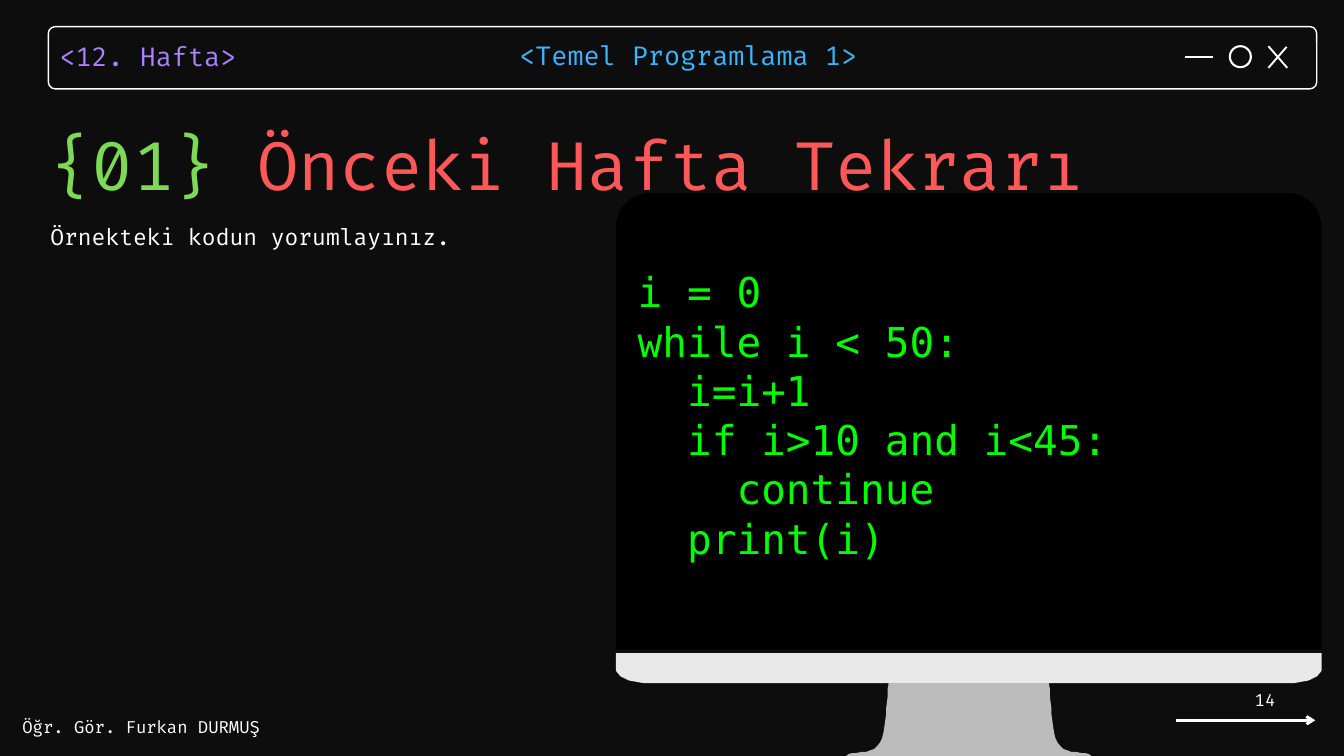
from pptx import Presentation
from pptx.dml.color import RGBColor
from pptx.enum import shapes, text
from pptx.oxml import parse_xml
from pptx.oxml.ns import nsdecls
from pptx.util import Pt

PX = 9525  # EMU per px, 96 px to the inch
COLORS = {
    "background": "0D0D0D", "white": "FFFFFF", "black": "000000",
    "purple": "AB81FF", "blue": "38B6FF", "green": "7ED957", "red": "FF5858",
    "code": "00FF00", "base": "E9E9E9", "stand": "BBBBBB",
}
RGB = {name: RGBColor.from_string(value) for name, value in COLORS.items()}


def write(box, paragraphs, size, font="Fira Code", spacing=None, inset=0,
          align=text.PP_ALIGN.LEFT, anchor=text.MSO_ANCHOR.TOP):
    """Fill a box with paragraphs, each a list of (words, colour) spans."""
    frame = box.text_frame
    frame.word_wrap = True
    frame.auto_size = text.MSO_AUTO_SIZE.NONE
    frame.vertical_anchor = anchor
    frame.margin_left = frame.margin_right = inset * PX
    frame.margin_top = frame.margin_bottom = inset * PX // 2
    for index, spans in enumerate(paragraphs):
        para = frame.add_paragraph() if index else frame.paragraphs[0]
        para.alignment = align
        if spacing:
            para.line_spacing = Pt(spacing)
        for words, color in spans:
            span = para.add_run()
            span.text = words
            span.font.size = Pt(size)
            span.font.name = font
            span.font.color.rgb = RGB[color]


def curve(start, first, second, end, steps=12):
    """Points along a cubic curve, without its start."""
    points = []
    for step in range(1, steps + 1):
        t = step / steps
        weights = ((1 - t) ** 3, 3 * t * (1 - t) ** 2, 3 * t * t * (1 - t), t ** 3)
        corners = (start, first, second, end)
        points.append(tuple(sum(w * c[axis] for w, c in zip(weights, corners))
                            for axis in (0, 1)))
    return points


deck = Presentation()
deck.slide_width, deck.slide_height = 1920 * PX, 1080 * PX
page = deck.slides.add_slide(deck.slide_layouts[5])
page.background.fill.solid()
page.background.fill.fore_color.rgb = RGB["background"]

# Title
title = page.shapes.title
title.left, title.top, title.width, title.height = (
    n * PX for n in (72, 155, 1848, 135))
write(title, [[("{01} ", "green"), ("Önceki Hafta Tekrarı", "red")]],
      size=72, spacing=102.6)

# Window bar and its round button
for kind, bounds, width in (
        (shapes.MSO_SHAPE.ROUNDED_RECTANGLE, (69, 38, 1812, 89), 1.5),
        (shapes.MSO_SHAPE.OVAL, (1757, 66, 30, 30), 2.25)):
    outline = page.shapes.add_shape(kind, *(n * PX for n in bounds))
    outline.shadow.inherit = False
    outline.fill.background()
    outline.line.color.rgb = RGB["white"]
    outline.line.width = Pt(width)
    if kind == shapes.MSO_SHAPE.ROUNDED_RECTANGLE:
        outline.adjustments[0] = 0.11

# Close cross, minimise dash, page arrow
for ends, width, arrow in (
        ((1812, 66, 1839, 97), 2, False),
        ((1838, 67, 1812, 97), 2, False),
        ((1693, 82, 1733, 82), 2, False),
        ((1680, 1029, 1879, 1029), 3, True)):
    line = page.shapes.add_connector(shapes.MSO_CONNECTOR.STRAIGHT,
                                     *(n * PX for n in ends))
    line.line.color.rgb = RGB["white"]
    line.line.width = Pt(width)
    if arrow:
        line.line._get_or_add_ln().append(
            parse_xml(f'<a:tailEnd {nsdecls("a")} type="arrow"/>'))
    line._element.spPr.append(parse_xml(f'<a:effectLst {nsdecls("a")}/>'))

# Labels
for bounds, words, color, size, options in (
        ((85, 50, 326, 51), "<12. Hafta>", "purple", 28, {"spacing": 39.2}),
        ((742, 49, 508, 51), "<Temel Programlama 1>", "blue", 28, {"spacing": 39.2}),
        ((32, 1024, 352, 29), "Öğr. Gör. Furkan DURMUŞ", "white", 18, {}),
        ((72, 318, 704, 38), "Örnekteki kodun yorumlayınız.", "white", 24,
         {"align": text.PP_ALIGN.JUSTIFY}),
        ((1608, 980, 224, 38), "14", "white", 18,
         {"align": text.PP_ALIGN.RIGHT, "anchor": text.MSO_ANCHOR.MIDDLE,
          "inset": 10})):
    label = page.shapes.add_textbox(*(n * PX for n in bounds))
    write(label, [[(words, color)]], size, **options)

# Monitor: each part is a left half mirrored about the centre
CENTER = 1384
monitor_halves = {
    "black": [(CENTER, 276), (927, 276),
              *curve((927, 276), (901, 276), (880, 298), (880, 325)), (880, 928)],
    "base": [(CENTER, 933), (880, 933), (880, 955),
             *curve((880, 955), (880, 967), (901, 976), (927, 976))],
    "stand": [(CENTER, 976), (1269, 976),
              *curve((1269, 976), (1269, 976), (1266, 1026), (1262, 1047)),
              *curve((1262, 1047), (1257, 1083), (1220, 1071), (1210, 1079)),
              (1209, 1080)],
}
for color, half in monitor_halves.items():
    points = half + [(2 * CENTER - x, y) for x, y in reversed(half)]
    builder = page.shapes.build_freeform(*points[0], scale=PX)
    builder.add_line_segments(points[1:], close=True)
    part = builder.convert_to_shape()
    part.shadow.inherit = False
    part.fill.solid()
    part.fill.fore_color.rgb = RGB[color]
    part.line.fill.background()

screen = page.shapes.add_shape(shapes.MSO_SHAPE.RECTANGLE,
                               *(n * PX for n in (924, 304, 926, 586)))
screen.shadow.inherit = False
screen.fill.solid()
screen.fill.fore_color.rgb = RGB["black"]
screen.line.color.rgb = RGB["black"]
screen.line.width = Pt(2)

# Code on the screen
code_lines = (
    "i = 0",
    "while i < 50:",
    "  i=i+1",
    "  if i>10 and i<45:",
    "    continue",
    "  print(i)",
)
code = page.shapes.add_textbox(*(n * PX for n in (911, 381, 972, 426)))
write(code, [[(line, "code")] for line in code_lines], size=44,
      font="DejaVu Sans Mono", spacing=52.8)

deck.save("out.pptx")
